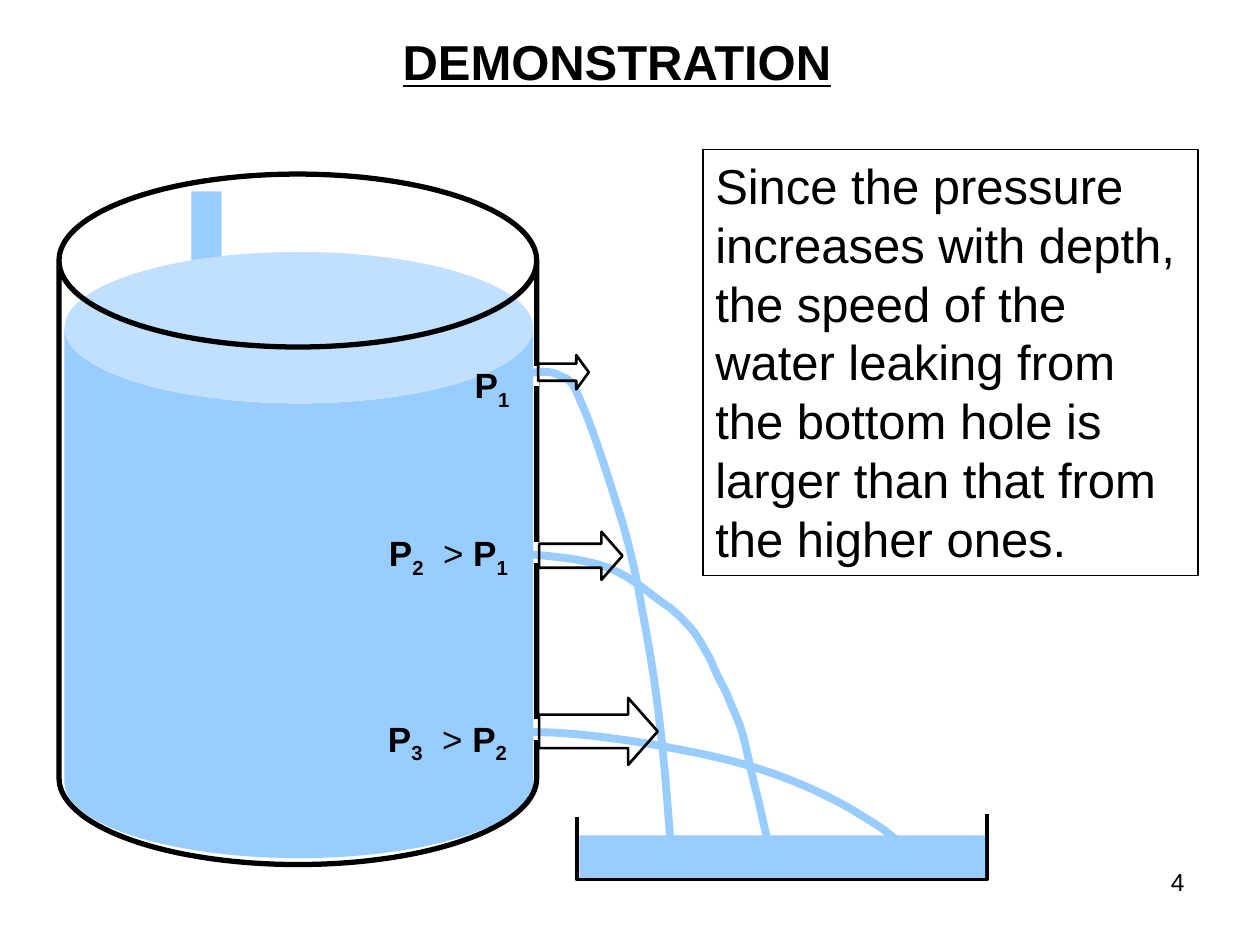
from lxml import etree
from pptx import Presentation
from pptx import util as u
from pptx.dml.color import RGBColor
from pptx.enum import shapes, text
from pptx.oxml.ns import qn

COLORS = {"ink": "000000", "water": "99CCFF", "paper": "FFFFFF"}
KIND = shapes.MSO_SHAPE
WALL = 10.82

# Each stream is a start point, then three points for every Bézier curve.
STREAMS = [
    [(10.62, 14.76), (10.92, 14.76), (11.2, 14.76), (11.71, 14.81),
     (12.22, 14.86), (12.95, 14.96), (13.59, 15.09),
     (14.25, 15.21), (14.96, 15.37), (15.6, 15.6),
     (16.23, 15.82), (16.92, 16.15), (17.4, 16.46),
     (17.88, 16.74), (18.29, 17.07), (18.47, 17.4)],
    [(10.74, 11.18), (11.28, 11.23), (11.84, 11.28), (12.29, 11.46),
     (12.75, 11.63), (13.21, 12.07), (13.49, 12.24),
     (13.74, 12.45), (13.74, 12.47), (13.87, 12.6),
     (14, 12.73), (14.12, 12.93), (14.2, 13.08),
     (14.27, 13.21), (14.33, 13.28), (14.38, 13.44),
     (14.45, 13.59), (14.55, 13.79), (14.66, 14),
     (14.73, 14.22), (14.86, 14.43), (14.96, 14.76),
     (15.06, 15.11), (15.16, 15.67), (15.29, 16.13),
     (15.39, 16.59), (15.49, 17.04), (15.62, 17.53)],
    [(10.69, 7.52), (10.9, 7.49), (11.1, 7.47), (11.28, 7.57),
     (11.43, 7.65), (11.51, 7.59), (11.71, 8.1),
     (11.94, 8.59), (12.34, 9.86), (12.55, 10.54),
     (12.75, 11.25), (12.83, 11.63), (12.95, 12.32),
     (13.08, 13), (13.21, 13.77), (13.31, 14.66),
     (13.41, 15.52), (13.49, 16.59), (13.56, 17.63)],
]
TRAY = [(11.63, 16.48), (11.63, 17.73), (19.89, 17.73), (19.89, 16.41)]
HOLES = [7.37, 10.92, 14.5]
ARROWS = [
    ((10.87, 14.07, 2.39, 1.35), 0.441),
    ((10.87, 10.72, 1.68, 0.97), 0.438),
    ((10.85, 7.16, 1.02, 0.69), 0.365),
]
LABELS = [
    ((9.32, 7.21, 1.24, 1.09), "1"),
    ((7.59, 10.59, 2.95, 1.09), "21"),
    ((7.57, 14.33, 2.95, 1.09), "32"),
]
NOTE = ("Since the pressure increases with depth, the speed of the water "
        "leaking from the bottom hole is larger than that from the higher ones.")


def tint(name):
    return RGBColor.from_string(COLORS[name])


def paint(shape, fill=None, line=None, width=1):
    shape.shadow.inherit = False
    if fill:
        shape.fill.solid()
        shape.fill.fore_color.rgb = tint(fill)
    else:
        shape.fill.background()
    if line:
        shape.line.color.rgb = tint(line)
        shape.line.width = u.Pt(width)
    else:
        shape.line.fill.background()


def add_shape(slide, kind, box, adjust=(), **style):
    shape = slide.shapes.add_shape(kind, *map(u.Cm, box))
    for i, value in enumerate(adjust):
        shape.adjustments[i] = value
    paint(shape, **style)
    return shape


def add_path(slide, points, **style):
    start, *rest = [(u.Cm(x), u.Cm(y)) for x, y in points]
    pen = slide.shapes.build_freeform(*start)
    pen.add_line_segments(rest, close=False)
    shape = pen.convert_to_shape()
    paint(shape, **style)
    return shape


def bend(shape):
    """Turn every three line segments of a freeform into one Bézier curve."""
    lines = list(shape._element.iter(qn("a:lnTo")))
    for i in range(0, len(lines), 3):
        first, *others = lines[i:i + 3]
        curve = etree.Element(qn("a:cubicBezTo"))
        first.addprevious(curve)
        for line in (first, *others):
            curve.append(line[0])
            line.getparent().remove(line)


def add_hole(slide, top):
    hole = slide.shapes.add_connector(
        shapes.MSO_CONNECTOR.STRAIGHT,
        *map(u.Cm, (WALL, top, WALL, top + 0.42)))
    hole.line.color.rgb = tint("paper")
    hole.line.width = u.Pt(3)
    etree.SubElement(hole._element.spPr, qn("a:effectLst"))


def set_font(font, size, bold=False):
    font.name = "Arial"
    font.size = u.Pt(size)
    font.bold = bold
    font.color.rgb = tint("ink")


def write(shape, words, size, bold=False, align=text.PP_ALIGN.LEFT, wrap=True):
    frame = shape.text_frame
    frame.word_wrap = wrap
    frame.auto_size = text.MSO_AUTO_SIZE.NONE
    frame.vertical_anchor = text.MSO_ANCHOR.TOP
    para = frame.paragraphs[0]
    para.text = words
    para.alignment = align
    set_font(para.font, size, bold)
    return para


def add_run(para, words, bold=True, **marks):
    run = para.add_run()
    run.text = words
    set_font(run.font, 20, bold)
    for name, value in marks.items():
        run._r.get_or_add_rPr().set(name, value)


def add_label(slide, box, digits):
    """Write P with a subscript for each digit, compared by a > sign."""
    para = write(slide.shapes.add_textbox(*map(u.Cm, box)), "", 20, True, wrap=False)
    for i, digit in enumerate(digits):
        if i:
            add_run(para, " ", False, spc="556")
            add_run(para, "> ", False)
        add_run(para, "P")
        add_run(para, digit, baseline="-25000")


def add_title(slide):
    title = slide.shapes.title
    title.left, title.top, title.width, title.height = map(
        u.Cm, (7.81, 0.51, 9.25, 1.45))
    para = write(title, "DEMONSTRATION", 28, True, text.PP_ALIGN.CENTER, False)
    para.font.underline = True


def main():
    deck = Presentation()
    deck.slide_width, deck.slide_height = u.Cm(25.4), u.Cm(19.05)
    slide = deck.slides.add_slide(deck.slide_layouts[5])
    add_title(slide)

    add_shape(slide, KIND.RECTANGLE, (3.86, 3.86, 0.61, 13.18), fill="water")
    add_shape(slide, KIND.CAN, (1.3, 5.08, 9.45, 12.22), [0.323], fill="water")
    add_shape(slide, KIND.CAN, (1.19, 3.51, 9.63, 13.92), [0.362],
              line="ink", width=3)
    for top in HOLES:
        add_hole(slide, top)
    for stream in STREAMS:
        bend(add_path(slide, stream, line="water", width=4.5))

    note = add_shape(slide, KIND.RECTANGLE, (14.17, 3.01, 9.98, 8.59),
                     line="ink", width=0.75)
    write(note, NOTE, 28)
    add_path(slide, TRAY, line="ink", width=2.25)
    add_shape(slide, KIND.RECTANGLE, (11.68, 16.84, 8.18, 0.86), fill="water")

    for box, digits in LABELS:
        add_label(slide, box, digits)
    for box, head in ARROWS:
        add_shape(slide, KIND.RIGHT_ARROW, box, [0.5, head], line="ink", width=1.5)
    page = slide.shapes.add_textbox(*map(u.Cm, (18.21, 17.35, 5.92, 1.32)))
    write(page, "4", 14, align=text.PP_ALIGN.RIGHT)
    deck.save("out.pptx")


if __name__ == "__main__":
    main()
